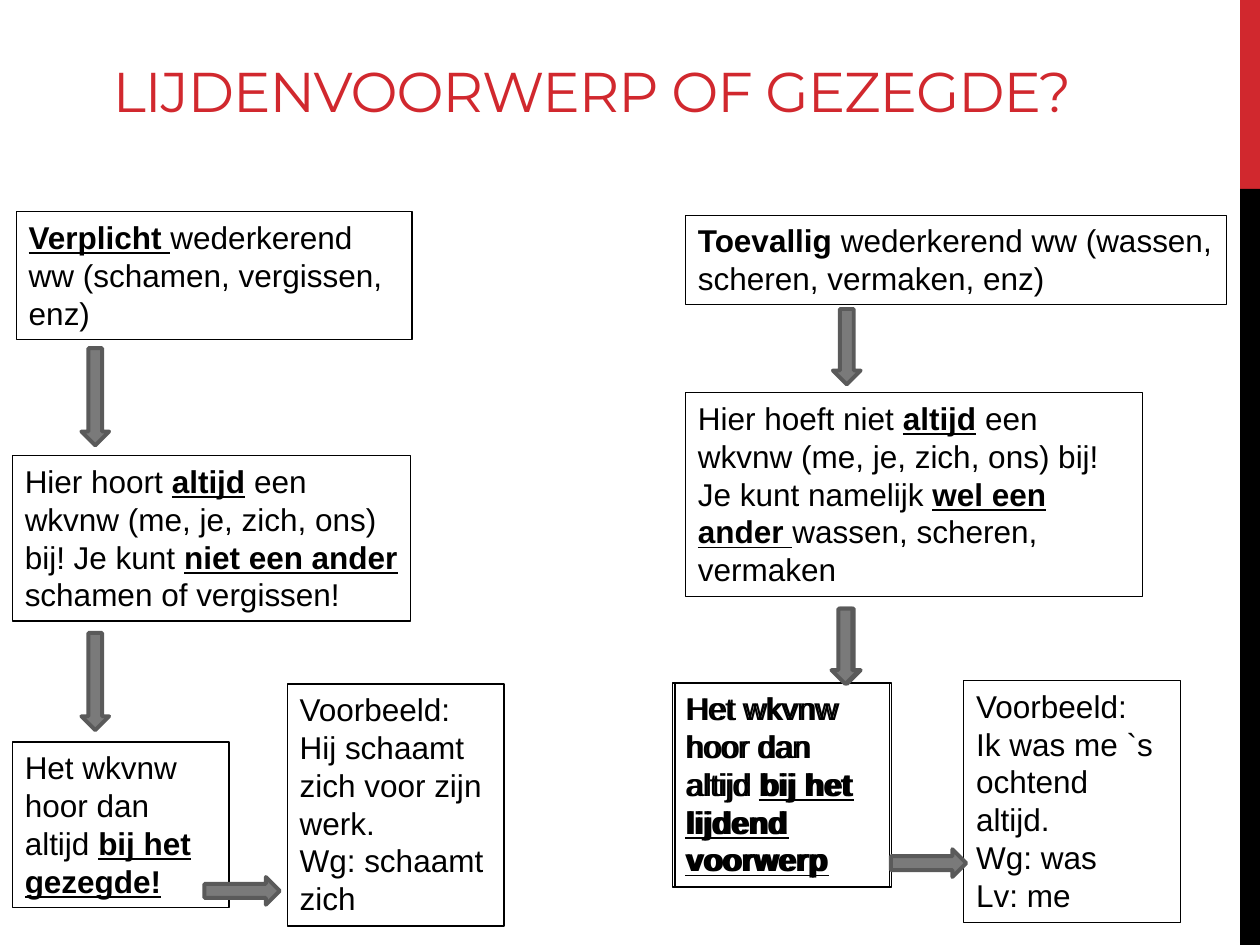
from pptx import Presentation
from pptx.dml.color import RGBColor
from pptx.enum.shapes import MSO_SHAPE
from pptx.enum.text import MSO_ANCHOR, MSO_AUTO_SIZE, PP_ALIGN
from pptx.util import Cm, Pt

RECT, ARROW = MSO_SHAPE.RECTANGLE, MSO_SHAPE.RIGHT_ARROW
BOTTOM, CENTER = MSO_ANCHOR.BOTTOM, PP_ALIGN.CENTER
GROW = MSO_AUTO_SIZE.SHAPE_TO_FIT_TEXT

COLORS = {"red": "D1282E", "black": "000000", "gray": "7A7A7A", "edge": "5A5A5A"}

# Run formats
PLAIN = {"name": "Arial", "size": Pt(18)}
BOLD = {**PLAIN, "bold": True}
STRONG = {**BOLD, "underline": True}
HEADING = {"name": "Montserrat", "size": Pt(32)}

# Content: all lengths in cm
TITLE = "LIJDENVOORWERP OF GEZEGDE?"
BARS = [("red", 0, 3.81), ("black", 3.81, 15.24)]  # colour, top, height
DIRECT_OBJECT = [[("Het wkvnw hoor dan altijd ", PLAIN),
                  ("bij het lijdend voorwerp", STRONG)]]

# (left, top, width, height), paragraphs of (text, format)
BOXES = [
    ((0.33, 4.27, 7.98, 2.57),
     [[("Verplicht ", STRONG), ("wederkerend ww (schamen, vergissen, enz)", PLAIN)]]),
    ((13.82, 4.34, 10.9, 1.8),
     [[("Toevallig", BOLD), (" wederkerend ww (wassen, scheren, vermaken, enz)", PLAIN)]]),
    ((0.25, 9.19, 8.03, 3.33),
     [[("Hier hoort ", PLAIN), ("altijd", STRONG),
       (" een wkvnw (me, je, zich, ons) bij! Je kunt ", PLAIN),
       ("niet een ander ", STRONG), ("schamen of vergissen!", PLAIN)]]),
    ((0.25, 14.96, 4.37, 3.33),
     [[("Het wkvnw hoor dan altijd ", PLAIN), ("bij het gezegde!", STRONG)]]),
    ((5.79, 13.79, 4.37, 4.88),
     [[("Voorbeeld:", PLAIN)], [("Hij schaamt zich voor zijn werk.", PLAIN)],
      [("Wg: schaamt zich", PLAIN)]]),
    ((13.82, 7.92, 9.22, 4.11),
     [[("Hier hoeft niet ", PLAIN), ("altijd", STRONG),
       (" een wkvnw (me, je, zich, ons) bij!", PLAIN)],
      [("Je kunt namelijk ", PLAIN), ("wel een ander ", STRONG),
       ("wassen, scheren, vermaken", PLAIN)]]),
    ((13.61, 13.77, 4.37, 4.11), DIRECT_OBJECT),
    ((13.56, 13.77, 4.37, 4.11), DIRECT_OBJECT),
    ((19.43, 13.72, 4.37, 4.88),
     [[("Voorbeeld:", PLAIN)], [("Ik was me `s ochtend altijd.", PLAIN)],
      [("Wg: was", PLAIN)], [("Lv: me", PLAIN)]]),
]

# centre x, centre y, length, rotation
ARROWS = [
    (1.92, 8.0, 1.96, 90), (1.92, 13.74, 1.96, 90),
    (17.07, 6.99, 1.52, 90), (17.07, 13.03, 1.52, 90), (17.04, 13.03, 1.52, 90),
    (4.88, 17.96, 1.52, 0), (18.72, 17.4, 1.52, 0),
]
THICKNESS = 0.56


def rgb(color):
    return RGBColor.from_string(COLORS[color])


def add_shape(kind, place, fill, line=None, width=0):
    sp = s.shapes.add_shape(kind, *map(Cm, place))
    sp.shadow.inherit = False
    sp.fill.solid()
    sp.fill.fore_color.rgb = rgb(fill)
    if line:
        sp.line.color.rgb = rgb(line)
        sp.line.width = Pt(width)
    else:
        sp.line.fill.background()
    return sp


def add_text(place, paragraphs, color):
    sp = s.shapes.add_textbox(*map(Cm, place))
    tf = sp.text_frame
    tf.word_wrap = True
    for i, runs in enumerate(paragraphs):
        p = tf.add_paragraph() if i else tf.paragraphs[0]
        for text, style in runs:
            r = p.add_run()
            r.text = text
            for key, value in style.items():
                setattr(r.font, key, value)
            r.font.color.rgb = rgb(color)
    return sp


prs = Presentation()
prs.slide_width, prs.slide_height = Cm(25.4), Cm(19.05)
s = prs.slides.add_slide(prs.slide_layouts[6])

# Bars on the right edge
for color, top, height in BARS:
    add_shape(RECT, (25, top, 0.4, height), color)

# Title
tf = add_text((0.25, 0.43, 23.37, 2.18), [[(TITLE, HEADING)]], "red").text_frame
tf.vertical_anchor = BOTTOM
p = tf.paragraphs[0]
p.alignment = CENTER
p.runs[0].font._element.set("spc", "-60")

# Text boxes
for place, paragraphs in BOXES:
    sp = add_text(place, paragraphs, "black")
    sp.text_frame.auto_size = GROW
    sp.line.color.rgb = rgb("black")
    sp.line.width = Pt(0.75)

# Arrows
for x, y, length, rotation in ARROWS:
    place = (x - length / 2, y - THICKNESS / 2, length, THICKNESS)
    add_shape(ARROW, place, "gray", "edge", 2.25).rotation = rotation

prs.save("out.pptx")
